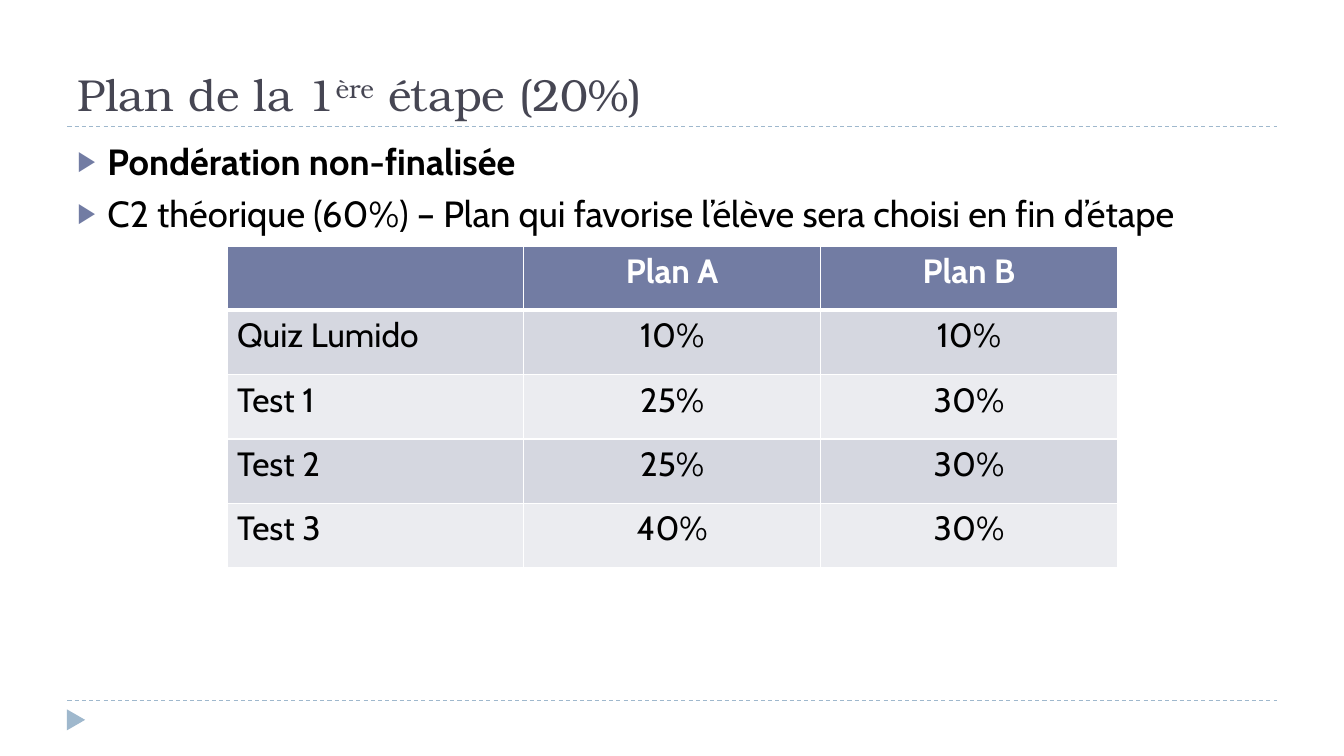
from dataclasses import dataclass

from lxml import etree
from pptx import Presentation
from pptx.dml.color import RGBColor
from pptx.enum.dml import MSO_LINE
from pptx.enum.shapes import MSO_CONNECTOR, MSO_SHAPE
from pptx.enum.text import MSO_ANCHOR, PP_ALIGN
from pptx.oxml.ns import qn
from pptx.util import Cm, Pt

DASH = MSO_LINE.DASH
STRAIGHT = MSO_CONNECTOR.STRAIGHT
TRIANGLE = MSO_SHAPE.ISOSCELES_TRIANGLE
BOTTOM = MSO_ANCHOR.BOTTOM
LEFT, CENTER = PP_ALIGN.LEFT, PP_ALIGN.CENTER


@dataclass(frozen=True)
class Theme:
    title_font: str = "TeX Gyre Bonum"
    body_font: str = "Cabin"
    title_size: int = 32
    body_size: int = 26
    table_size: int = 24
    title: str = "464653"
    text: str = "000000"
    white: str = "FFFFFF"
    accent: str = "727CA3"
    rule: str = "9FB8CD"
    bands: tuple = ("D5D7E0", "EBECF0")


theme = Theme()


def style_font(font, name, size, color, bold=False):
    font.name = name
    font.size = Pt(size)
    font.bold = bold
    font.color.rgb = RGBColor.from_string(color)


def add_xml(parent, tag, **attributes):
    """Append a DrawingML child element and return it."""
    return etree.SubElement(parent, qn(tag), attributes)


prs = Presentation()
prs.slide_width, prs.slide_height = Cm(33.87), Cm(19.05)
slide = prs.slides.add_slide(prs.slide_layouts[6])
shapes = slide.shapes

margin, content_width = Cm(1.7), Cm(30.48)

# Dashed rules and corner marker
for rule_y in (Cm(17.65), Cm(3.18)):
    rule = shapes.add_connector(STRAIGHT, margin, rule_y, margin + content_width, rule_y)
    rule.line.color.rgb = RGBColor.from_string(theme.rule)
    rule.line.width = Pt(0.75)
    rule.line.dash_style = DASH
    add_xml(rule._element.spPr, "a:effectLst")

marker = shapes.add_shape(TRIANGLE, Cm(1.65), Cm(17.91), Cm(0.53), Cm(0.46))
marker.rotation = 90
marker.shadow.inherit = False
marker.fill.solid()
marker.fill.fore_color.rgb = RGBColor.from_string(theme.rule)
marker.line.fill.background()

# Title
title = shapes.add_textbox(margin, Cm(0.43), content_width, Cm(2.74)).text_frame
title.word_wrap = True
title.vertical_anchor = BOTTOM
heading = title.paragraphs[0]
style_font(heading.font, theme.title_font, theme.title_size, theme.title)
for text, baseline in (("Plan de la 1", 0), ("ère", 30000), (" étape (20%)", 0)):
    run = heading.add_run()
    run.text = text
    if baseline:
        run._r.get_or_add_rPr().set("baseline", str(baseline))

# Bullets
points = (
    ("Pondération non-finalisée", True),
    ("C2 théorique (60%) – Plan qui favorise l’élève sera choisi en fin d’étape", False),
)
body = shapes.add_textbox(margin, Cm(3.38), content_width, Cm(13.72)).text_frame
body.word_wrap = True
for index, (text, bold) in enumerate(points):
    point = body.add_paragraph() if index else body.paragraphs[0]
    point.text = text
    point.space_before = Pt(6)
    style_font(point.font, theme.body_font, theme.body_size, theme.text, bold)
    properties = point._p.get_or_add_pPr()
    properties.set("marL", str(Cm(0.76)))
    properties.set("indent", str(-Cm(0.76)))
    bullet_parts = [
        etree.Element(qn("a:buClr")),
        etree.Element(qn("a:buSzPct"), val="76000"),
        etree.Element(qn("a:buFont"), typeface="Arial"),
        etree.Element(qn("a:buChar"), char="▶"),
    ]
    add_xml(bullet_parts[0], "a:srgbClr", val=theme.accent)
    defaults = properties.find(qn("a:defRPr"))
    for part in bullet_parts:
        if defaults is None:
            properties.append(part)
        else:
            defaults.addprevious(part)

# Weighting table
weights = (
    ("", "Plan A", "Plan B"),
    ("Quiz Lumido", "10%", "10%"),
    ("Test 1", "25%", "30%"),
    ("Test 2", "25%", "30%"),
    ("Test 3", "40%", "30%"),
)
column_width, row_height = Cm(7.48), Cm(1.62)
table = shapes.add_table(
    len(weights), len(weights[0]), Cm(5.72), Cm(6.2),
    column_width * len(weights[0]), row_height * len(weights),
).table
for column in table.columns:
    column.width = column_width
for row_index, row in enumerate(weights):
    table.rows[row_index].height = row_height
    is_header = row_index == 0
    fill_color = theme.accent if is_header else theme.bands[(row_index - 1) % 2]
    border_widths = {
        "a:lnL": 1,
        "a:lnR": 1,
        "a:lnT": 3 if row_index == 1 else 1,
        "a:lnB": 3 if is_header else 1,
    }
    for column_index, text in enumerate(row):
        cell = table.cell(row_index, column_index)
        cell.text = text
        entry = cell.text_frame.paragraphs[0]
        entry.alignment = CENTER if column_index else LEFT
        style_font(entry.font, theme.body_font, theme.table_size,
                   theme.white if is_header else theme.text, is_header)
        cell_properties = cell._tc.get_or_add_tcPr()
        for side, width in border_widths.items():
            border = add_xml(cell_properties, side, w=str(Pt(width)))
            add_xml(add_xml(border, "a:solidFill"), "a:srgbClr", val=theme.white)
        cell.fill.solid()
        cell.fill.fore_color.rgb = RGBColor.from_string(fill_color)

prs.save("out.pptx")
